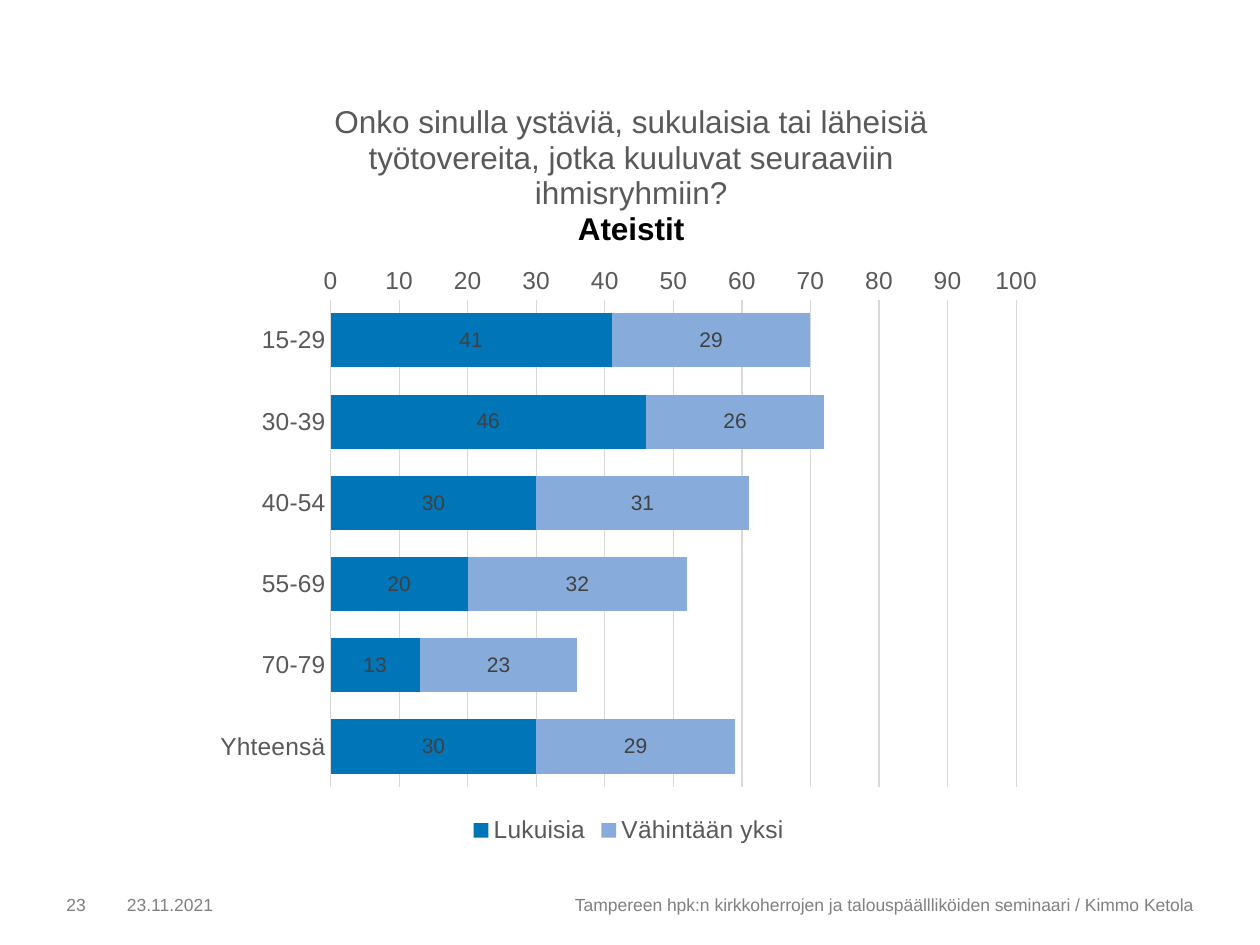
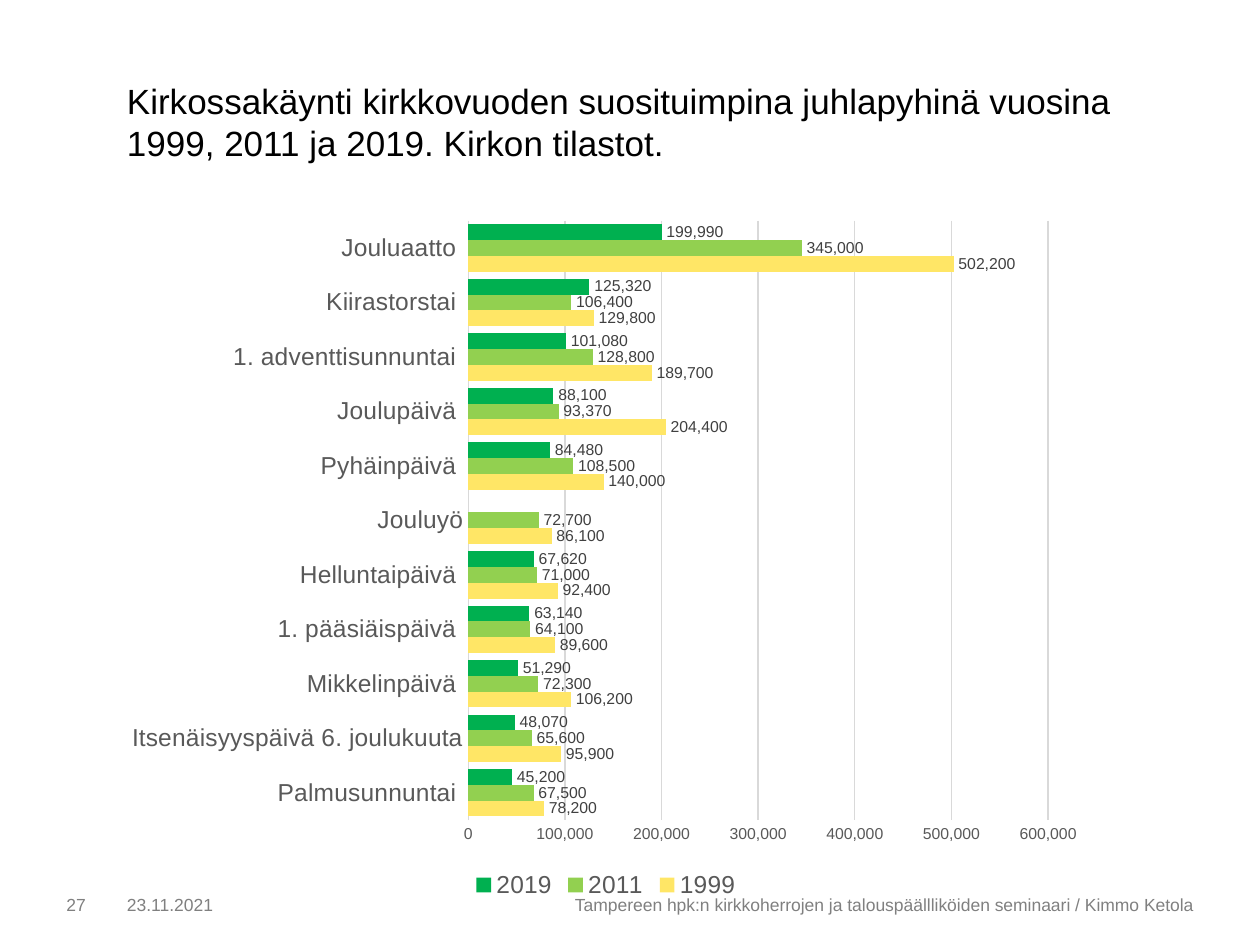
"""Build two slides with bar charts on friends by age group and church attendance."""
from lxml import etree
from pptx import Presentation
from pptx.chart.data import CategoryChartData
from pptx.dml.color import RGBColor
from pptx.enum.chart import XL_CHART_TYPE, XL_LABEL_POSITION, XL_LEGEND_POSITION, XL_TICK_MARK
from pptx.enum.text import MSO_ANCHOR, PP_ALIGN
from pptx.oxml.ns import qn
from pptx.util import Cm, Pt

STACKED, CLUSTERED = XL_CHART_TYPE.BAR_STACKED, XL_CHART_TYPE.BAR_CLUSTERED
CENTER, OUTSIDE = XL_LABEL_POSITION.CENTER, XL_LABEL_POSITION.OUTSIDE_END
BOTTOM, NO_TICK = XL_LEGEND_POSITION.BOTTOM, XL_TICK_MARK.NONE
TOP, MIDDLE = MSO_ANCHOR.TOP, MSO_ANCHOR.MIDDLE
LEFT, RIGHT = PP_ALIGN.LEFT, PP_ALIGN.RIGHT

BLACK = RGBColor(0x00, 0x00, 0x00)
FOOTER_GRAY = RGBColor(0x80, 0x80, 0x80)
AXIS_GRAY = RGBColor(0x59, 0x59, 0x59)
LABEL_GRAY = RGBColor(0x40, 0x40, 0x40)
GRID_GRAY = RGBColor(0xD9, 0xD9, 0xD9)
BLUE = RGBColor(0x00, 0x76, 0xB8)
LIGHT_BLUE = RGBColor(0x87, 0xAC, 0xDB)
YELLOW = RGBColor(0xFF, 0xE6, 0x66)
LIGHT_GREEN = RGBColor(0x92, 0xD0, 0x50)
GREEN = RGBColor(0x00, 0xB0, 0x50)

FONT = "Arial"
DATE = "23.11.2021"
EVENT = "Tampereen hpk:n kirkkoherrojen ja talouspäällliköiden seminaari / Kimmo Ketola"

AGE_GROUPS = ["15-29", "30-39", "40-54", "55-69", "70-79", "Yhteensä"]
FRIENDS = [
    ("Lukuisia", BLUE, [41, 46, 30, 20, 13, 30]),
    ("Vähintään yksi", LIGHT_BLUE, [29, 26, 31, 32, 23, 29]),
]
HOLY_DAYS = [
    "Palmusunnuntai ", "Itsenäisyyspäivä 6. joulukuuta", "Mikkelinpäivä ",
    "1. pääsiäispäivä ", "Helluntaipäivä ", "Jouluyö", "Pyhäinpäivä ",
    "Joulupäivä ", "1. adventtisunnuntai ", "Kiirastorstai ", "Jouluaatto ",
]
ATTENDANCE = [
    ("1999", YELLOW, [78200, 95900, 106200, 89600, 92400, 86100,
                      140000, 204400, 189700, 129800, 502200]),
    ("2011", LIGHT_GREEN, [67500, 65600, 72300, 64100, 71000, 72700,
                           108500, 93370, 128800, 106400, 345000]),
    ("2019", GREEN, [45200, 48070, 51290, 63140, 67620, None,
                     84480, 88100, 101080, 125320, 199990]),
]


def style_font(font, size, color, bold=False):
    """Apply the shared typeface with a size and a colour."""
    font.name, font.size, font.bold = FONT, Pt(size), bold
    font.color.rgb = color


def write(para, text, size=10, color=BLACK, bold=False, align=None, line=None):
    """Write one formatted span of text into a paragraph."""
    para.alignment = align
    if line:
        para.line_spacing = Pt(line)
    span = para.add_run()
    span.text = text
    style_font(span.font, size, color, bold)


def make_layout(**fractions):
    """Return a manual chart layout with positions as fractions of the chart."""
    layout = etree.Element(qn("c:layout"))
    manual = etree.SubElement(layout, qn("c:manualLayout"))
    if "w" in fractions:
        etree.SubElement(manual, qn("c:layoutTarget")).set("val", "inner")
    for name in ("x", "y"):
        etree.SubElement(manual, qn(f"c:{name}Mode")).set("val", "edge")
    for name, value in fractions.items():
        etree.SubElement(manual, qn(f"c:{name}")).set("val", str(value))
    return layout


def drop_layout(element):
    """Remove the automatic layout of a chart part."""
    for old in element.findall(qn("c:layout")):
        element.remove(old)


class SeminarDeck:
    """Holds the deck, its current slide and the shared style."""

    def __init__(self):
        self.deck = Presentation()
        self.deck.slide_width, self.deck.slide_height = Cm(25.4), Cm(19.05)
        self.page = None

    def add_page(self, number):
        """Start a slide with its footer."""
        self.page = self.deck.slides.add_slide(self.deck.slide_layouts[6])
        footers = [(DATE, 2.31, 5.21, LEFT), (EVENT, 7.49, 16.81, RIGHT),
                   (str(number), 1.09, 1.19, LEFT)]
        for text, left, width, align in footers:
            self.add_text(text, (left, 17.93, width, 0.61), MIDDLE,
                          color=FOOTER_GRAY, align=align)

    def add_text(self, text, place, anchor=TOP, **style):
        """Add a wrapping text box."""
        box = self.page.shapes.add_textbox(*map(Cm, place))
        frame = box.text_frame
        frame.word_wrap, frame.vertical_anchor = True, anchor
        write(frame.paragraphs[0], text, **style)

    def add_bars(self, kind, place, plot_area, categories, rows, gap, overlap,
                 top, step, number_format, value_size, label_size, label_place):
        """Add a horizontal bar chart and return it."""
        data = CategoryChartData(number_format=number_format)
        data.categories = categories
        for name, _, values in rows:
            data.add_series(name, values)
        chart = self.page.shapes.add_chart(kind, *map(Cm, place), data).chart
        style_font(chart.font, 10, BLACK)
        chart.has_title = False
        chart.has_legend = True
        chart.legend.position = BOTTOM
        chart.legend.include_in_layout = False
        style_font(chart.legend.font, 14, AXIS_GRAY)

        plot = chart.plots[0]
        plot.vary_by_categories = False
        plot.gap_width, plot.overlap = gap, overlap
        for series, (_, color, _) in zip(plot.series, rows):
            series.format.fill.solid()
            series.format.fill.fore_color.rgb = color
            labels = series.data_labels
            labels.show_value, labels.position = True, label_place
            labels.number_format, labels.number_format_is_linked = number_format, False
            style_font(labels.font, label_size, LABEL_GRAY)

        for axis, size in ((chart.category_axis, 14), (chart.value_axis, value_size)):
            axis.major_tick_mark = axis.minor_tick_mark = NO_TICK
            style_font(axis.tick_labels.font, size, AXIS_GRAY)
        chart.category_axis.has_major_gridlines = False
        values = chart.value_axis
        values.minimum_scale, values.maximum_scale, values.major_unit = 0, top, step
        values.tick_labels.number_format = number_format
        values.tick_labels.number_format_is_linked = False
        values.format.line.fill.background()
        values.has_major_gridlines = True
        for line in (chart.category_axis.format.line, values.major_gridlines.format.line):
            line.color.rgb, line.width = GRID_GRAY, Pt(0.75)

        area = chart._chartSpace.chart.plotArea
        drop_layout(area)
        area.insert(0, make_layout(**dict(zip("xywh", plot_area))))
        return chart

    def add_chart_title(self, chart, question, group, x, y):
        """Add a chart title with a question and a bold group name."""
        chart.has_title = True
        title = chart.chart_title
        frame = title.text_frame
        write(frame.paragraphs[0], question, size=18, color=AXIS_GRAY)
        write(frame.add_paragraph(), group, size=18, bold=True)
        title.include_in_layout = False
        drop_layout(title._element)
        title._element.find(qn("c:tx")).addnext(make_layout(x=x, y=y))


def main():
    """Build and save both slides."""
    seminar = SeminarDeck()

    seminar.add_page(23)
    friends = seminar.add_bars(
        STACKED, (4.09, 1.52, 17.17, 15.6), (0.15, 0.29, 0.805, 0.63),
        AGE_GROUPS, FRIENDS, gap=50, overlap=100, top=100, step=10,
        number_format="0", value_size=14, label_size=12, label_place=CENTER)
    friends.category_axis.reverse_order = True
    seminar.add_chart_title(
        friends, "Onko sinulla ystäviä, sukulaisia tai läheisiä työtovereita, "
        "jotka kuuluvat seuraaviin ihmisryhmiin?", "Ateistit", x=0.15, y=0.03)

    seminar.add_page(27)
    seminar.add_text(
        "Kirkossakäynti kirkkovuoden suosituimpina juhlapyhinä vuosina "
        "1999, 2011 ja 2019. Kirkon tilastot.",
        (2.31, 1.47, 20.6, 1.96), size=20, line=24)
    seminar.add_bars(
        CLUSTERED, (2.31, 4.17, 19.81, 14.05), (0.36, 0.02, 0.59, 0.86),
        HOLY_DAYS, ATTENDANCE, gap=45, overlap=0, top=600000, step=100000,
        number_format="#,##0", value_size=9, label_size=9, label_place=OUTSIDE)

    seminar.deck.save("out.pptx")


if __name__ == "__main__":
    main()
